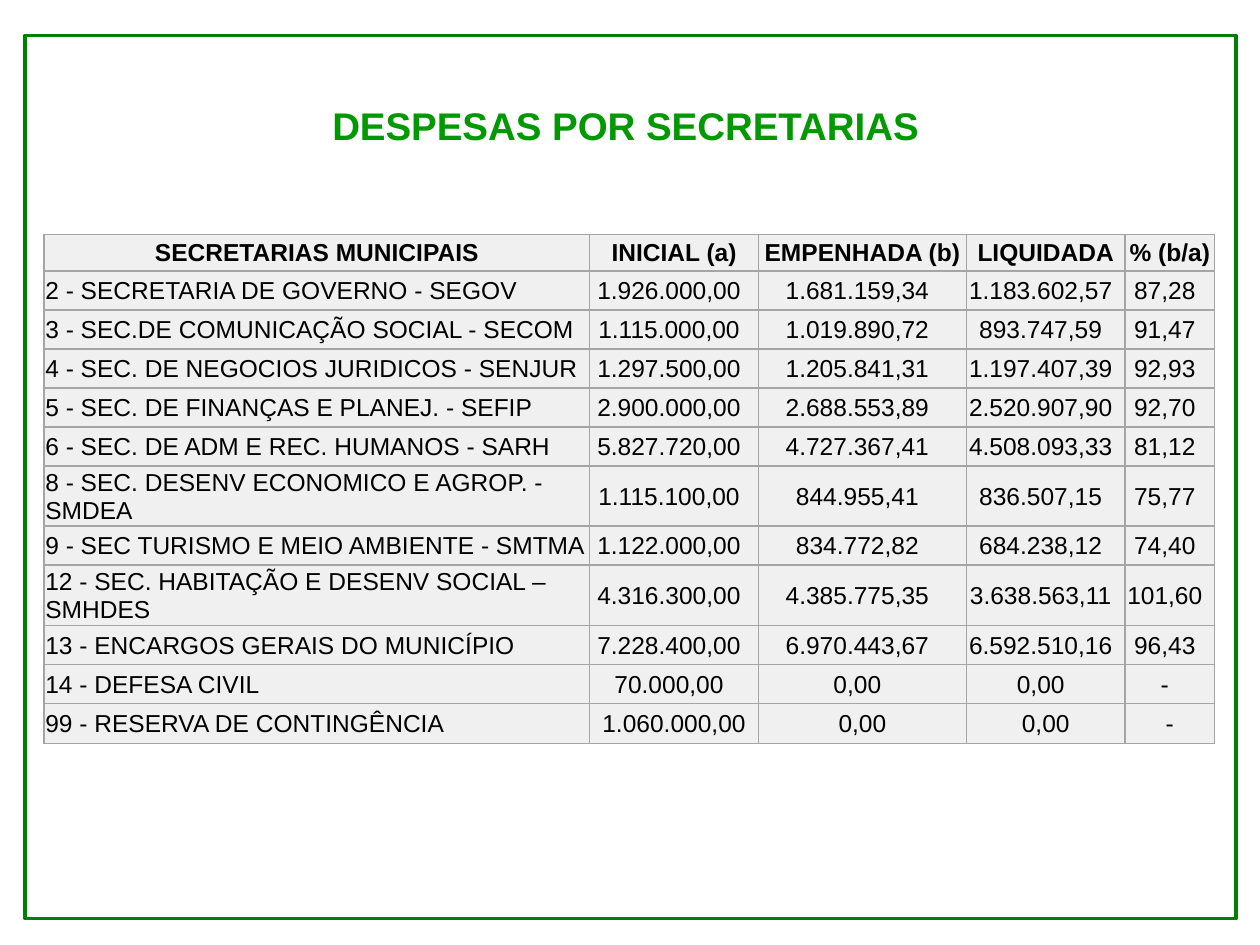
import pptx
import pptx.util
import pptx.dml.color
import pptx.enum.dml
import pptx.enum.shapes
import pptx.enum.text
import pptx.oxml

COLORS = {
    "frame": "008000",
    "title": "009900",
    "text": "000000",
    "cell": "F0F0F0",
    "border": "A5A5A5",
}
GRID_COLUMNS, GRID_ROWS = 100, 75
COLUMN_SPANS = [43.3, 13.4, 16.5, 12.6, 7.1]
HEADER_SPAN, ROW_SPAN, LAST_SPAN = 2.9, 3.1, 3.2

HEADINGS = ["SECRETARIAS MUNICIPAIS", "INICIAL (a)", "EMPENHADA (b)", "LIQUIDADA", "% (b/a)"]
EXPENSES = [
    ["2 - SECRETARIA DE GOVERNO - SEGOV", "1.926.000,00", "1.681.159,34", "1.183.602,57", "87,28"],
    ["3 - SEC.DE COMUNICAÇÃO SOCIAL - SECOM", "1.115.000,00", "1.019.890,72", "893.747,59", "91,47"],
    ["4 - SEC. DE NEGOCIOS JURIDICOS - SENJUR", "1.297.500,00", "1.205.841,31", "1.197.407,39", "92,93"],
    ["5 - SEC. DE FINANÇAS E PLANEJ. - SEFIP", "2.900.000,00", "2.688.553,89", "2.520.907,90", "92,70"],
    ["6 - SEC. DE ADM E REC. HUMANOS - SARH", "5.827.720,00", "4.727.367,41", "4.508.093,33", "81,12"],
    ["8 - SEC. DESENV ECONOMICO E AGROP. - SMDEA", "1.115.100,00", "844.955,41", "836.507,15", "75,77"],
    ["9 - SEC TURISMO E MEIO AMBIENTE - SMTMA", "1.122.000,00", "834.772,82", "684.238,12", "74,40"],
    ["12 - SEC. HABITAÇÃO E DESENV SOCIAL – SMHDES", "4.316.300,00", "4.385.775,35", "3.638.563,11", "101,60"],
    ["13 - ENCARGOS GERAIS DO MUNICÍPIO", "7.228.400,00", "6.970.443,67", "6.592.510,16", "96,43"],
    ["14 - DEFESA CIVIL", "70.000,00", "0,00", "0,00", "-"],
    ["99 - RESERVA DE CONTINGÊNCIA", "1.060.000,00", "0,00", "0,00", "-"],
]


def color(key):
    return pptx.dml.color.RGBColor.from_string(COLORS[key])


def write(text_frame, content, size=14, ink="text", bold=False, centered=True):
    align = pptx.enum.text.PP_ALIGN
    paragraph = text_frame.paragraphs[0]
    paragraph.alignment = align.CENTER if centered else align.LEFT
    run = paragraph.add_run()
    run.text = content
    run.font.name = "Arial"
    run.font.size = pptx.util.Pt(size)
    run.font.bold = bold
    run.font.color.rgb = color(ink)


class ReportSlide:
    def __init__(self, deck):
        self.cell_width = deck.slide_width / GRID_COLUMNS
        self.cell_height = deck.slide_height / GRID_ROWS
        self.slide = deck.slides.add_slide(deck.slide_layouts[5])

    def columns(self, count):
        return round(self.cell_width * count)

    def rows(self, count):
        return round(self.cell_height * count)

    def area(self, left, top, width, height):
        return self.columns(left), self.rows(top), self.columns(width), self.rows(height)

    def frame(self, *spans):
        border = self.slide.shapes.add_shape(
            pptx.enum.shapes.MSO_SHAPE.RECTANGLE, *self.area(*spans))
        border.shadow.inherit = False
        border.fill.background()
        border.line.color.rgb = color("frame")
        border.line.width = pptx.util.Pt(2)

    def title(self, content, *spans):
        heading = self.slide.shapes.title
        heading.left, heading.top, heading.width, heading.height = self.area(*spans)
        heading.text_frame.word_wrap = True
        heading.text_frame.auto_size = pptx.enum.text.MSO_AUTO_SIZE.SHAPE_TO_FIT_TEXT
        heading.text_frame.vertical_anchor = pptx.enum.text.MSO_ANCHOR.MIDDLE
        write(heading.text_frame, content, size=22, ink="title", bold=True)

    def table(self, left, top, records, column_spans, row_spans):
        spans = left, top, sum(column_spans), sum(row_spans)
        grid = self.slide.shapes.add_table(
            len(records), len(column_spans), *self.area(*spans)).table
        grid.first_row = grid.horz_banding = False
        for column, span in zip(grid.columns, column_spans):
            column.width = self.columns(span)
        for row, span in zip(grid.rows, row_spans):
            row.height = self.rows(span)
        last = len(records) - 1
        for r, record in enumerate(records):
            for c, content in enumerate(record):
                amount = 0 < r < last and c > 0
                self.cell(grid.cell(r, c), content, right_margin=0.09 if amount else 0.01,
                          bold=r == 0, centered=r == 0 or c > 0)

    def cell(self, cell, content, right_margin, **style):
        cell.margin_left = cell.margin_top = pptx.util.Inches(0.01)
        cell.margin_right = pptx.util.Inches(right_margin)
        cell.margin_bottom = 0
        cell.vertical_anchor = pptx.enum.text.MSO_ANCHOR.MIDDLE
        cell.fill.solid()
        cell.fill.fore_color.rgb = color("cell")
        write(cell.text_frame, content, **style)
        properties = cell._tc.get_or_add_tcPr()
        for position, side in enumerate(("lnL", "lnR", "lnT", "lnB")):
            properties.insert(position, pptx.oxml.parse_xml(
                f'<a:{side} xmlns:a="http://schemas.openxmlformats.org/drawingml/2006/main" '
                f'w="{pptx.util.Pt(1)}"><a:solidFill><a:srgbClr val="{COLORS["border"]}"/>'
                f'</a:solidFill></a:{side}>'))


def main():
    deck = pptx.Presentation()
    deck.slide_width = pptx.util.Inches(10)
    deck.slide_height = pptx.util.Inches(7.5)
    report = ReportSlide(deck)
    report.frame(2, 2.8, 96.1, 70.1)
    report.title("DESPESAS POR SECRETARIAS", 9.1, 7.6, 81.1, 4.7)
    row_spans = [HEADER_SPAN] + [ROW_SPAN] * (len(EXPENSES) - 1) + [LAST_SPAN]
    report.table(3.5, 18.6, [HEADINGS] + EXPENSES, COLUMN_SPANS, row_spans)
    deck.save("out.pptx")


if __name__ == "__main__":
    main()
